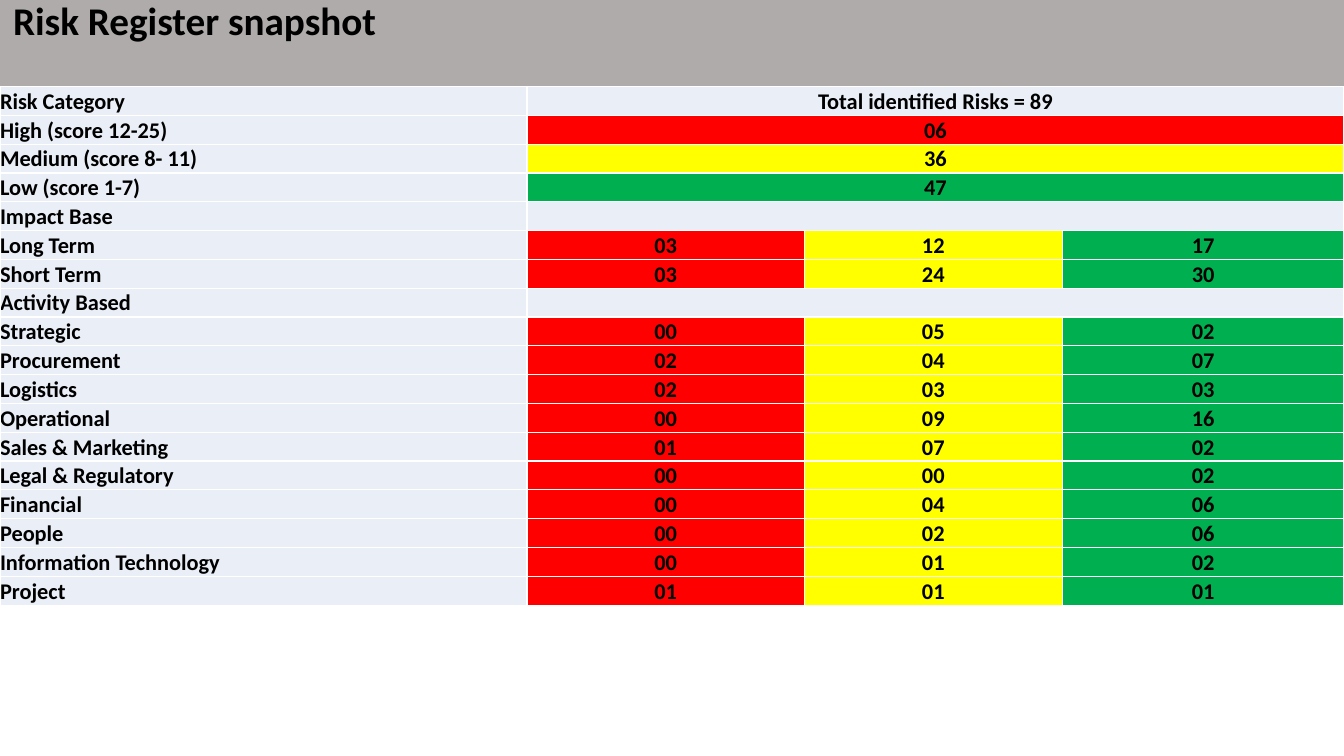
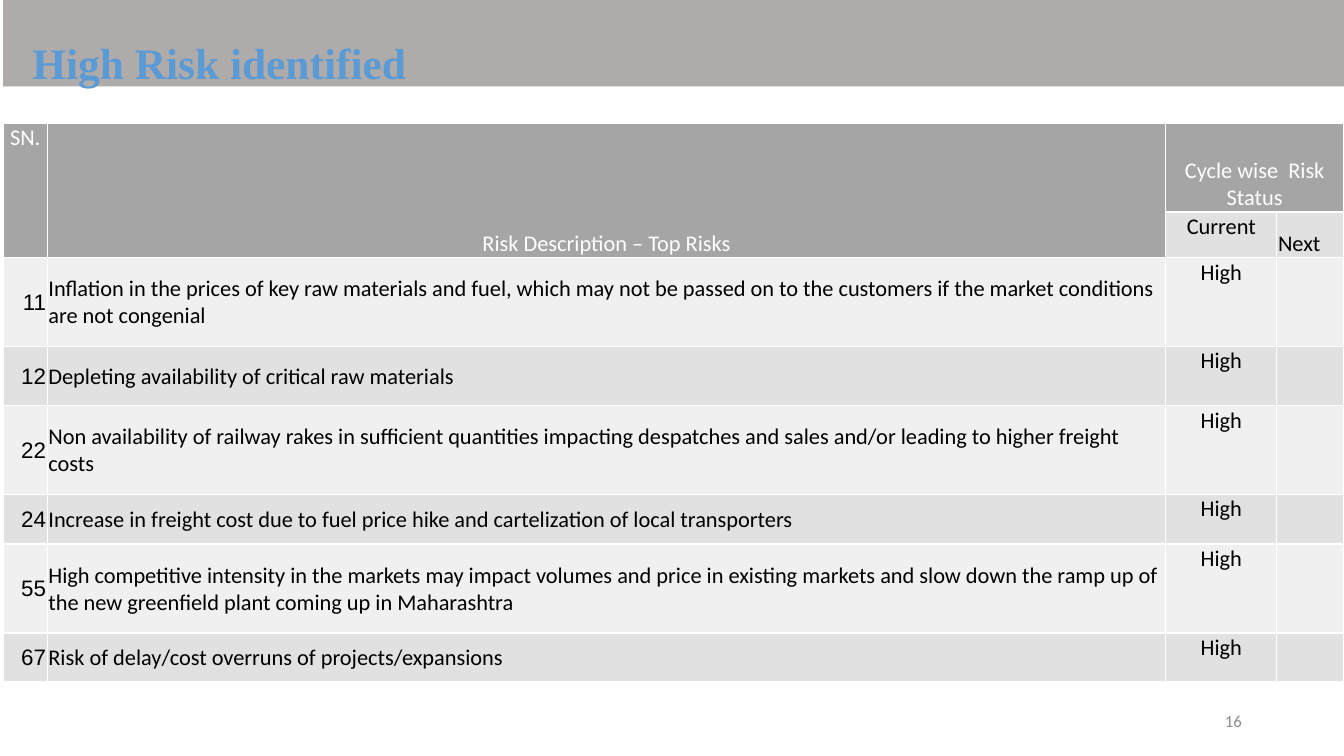
from pptx import Presentation
from pptx.dml.color import RGBColor
from pptx.enum.shapes import MSO_SHAPE as Shape
from pptx.enum.text import MSO_ANCHOR as Anchor, PP_ALIGN as Align
from pptx.util import Cm, Pt

BLACK = RGBColor(0x00, 0x00, 0x00)
WHITE = RGBColor(0xFF, 0xFF, 0xFF)
BAND_GREY = RGBColor(0xAF, 0xAB, 0xAB)
TITLE_BLUE = RGBColor(0x5B, 0x9B, 0xD5)
NUMBER_GREY = RGBColor(0x8C, 0x8C, 0x8C)
LABEL_BLUE = RGBColor(0xEA, 0xEF, 0xF7)
RED = RGBColor(0xFF, 0x00, 0x00)
YELLOW = RGBColor(0xFF, 0xFF, 0x00)
GREEN = RGBColor(0x00, 0xB0, 0x50)
HEADER_GREY = RGBColor(0xA5, 0xA5, 0xA5)
DARK_ROW = RGBColor(0xE1, 0xE1, 0xE1)
LIGHT_ROW = RGBColor(0xF0, 0xF0, 0xF0)

BODY_FONT = "Calibri"
NUMBER_FONT = "Arial"
SERIF_FONT = "Times New Roman"
PAGE_WIDTH, PAGE_HEIGHT = Cm(33.87), Cm(19.05)
BAND_HEIGHT = Cm(2.18)
EDGE = Cm(0.08)

SUMMARY_ROWS = [
    ("Risk Category", ["Total identified Risks = 89"], [LABEL_BLUE]),
    ("High (score 12-25)", ["06"], [RED]),
    ("Medium (score 8- 11)", ["36"], [YELLOW]),
    ("Low (score 1-7)", ["47"], [GREEN]),
]
IMPACT_COUNTS = [
    ("Long Term", ["03", "12", "17"]),
    ("Short Term", ["03", "24", "30"]),
]
ACTIVITY_COUNTS = [
    ("Strategic", ["00", "05", "02"]),
    ("Procurement", ["02", "04", "07"]),
    ("Logistics", ["02", "03", "03"]),
    ("Operational", ["00", "09", "16"]),
    ("Sales & Marketing", ["01", "07", "02"]),
    ("Legal & Regulatory", ["00", "00", "02"]),
    ("Financial", ["00", "04", "06"]),
    ("People", ["00", "02", "06"]),
    ("Information Technology", ["00", "01", "02"]),
    ("Project", ["01", "01", "01"]),
]
TOP_RISKS = [
    ("11", "Inflation in the prices of key raw materials and fuel, which may not be passed on "
           "to the customers if the market conditions are not congenial"),
    ("12", "Depleting availability of critical raw materials"),
    ("22", "Non availability of railway rakes in sufficient quantities impacting despatches "
           "and sales and/or leading to higher freight costs"),
    ("24", "Increase in freight cost due to fuel price hike and cartelization of local "
           "transporters"),
    ("55", "High competitive intensity in the markets may impact volumes and price in "
           "existing markets and slow down the ramp up of the new greenfield plant coming "
           "up in Maharashtra"),
    ("67", "Risk of delay/cost overruns of projects/expansions"),
]


def set_font(para, size, color=BLACK, name=BODY_FONT, bold=False):
    """Set the font of a whole paragraph."""
    font = para.font
    font.size, font.name, font.bold = Pt(size), name, bold
    font.color.rgb = color


def add_text(page, box, text, anchor=Anchor.TOP):
    """Add a wrapping text box and return it with its paragraph."""
    frame = page.shapes.add_textbox(*box).text_frame
    frame.word_wrap = True
    frame.vertical_anchor = anchor
    para = frame.paragraphs[0]
    para.text = text
    return frame, para


def add_band(page, left):
    """Draw the grey title band from left to the right page edge."""
    band = page.shapes.add_shape(Shape.RECTANGLE, left, 0, PAGE_WIDTH - left, BAND_HEIGHT)
    band.shadow.inherit = False
    band.fill.solid()
    band.fill.fore_color.rgb = BAND_GREY
    band.line.fill.background()


def add_grid(page, left, top, widths, heights, inset, bold=False):
    """Add a plain table whose cells share insets and a font."""
    table = page.shapes.add_table(len(heights), len(widths), left, top,
                                  sum(widths), sum(heights)).table
    table.first_row = table.horz_banding = False
    for column, width in zip(table.columns, widths):
        column.width = width
    for row, height in zip(table.rows, heights):
        row.height = height
    for cell in table.iter_cells():
        cell.margin_left = cell.margin_right = cell.margin_top = inset
        cell.margin_bottom = 0
        set_font(cell.text_frame.paragraphs[0], 16, bold=bold)
    return table


def fill_cell(cell, text, color, align=Align.LEFT, anchor=Anchor.BOTTOM):
    """Colour a cell, write its text and return the paragraph."""
    cell.fill.solid()
    cell.fill.fore_color.rgb = color
    cell.vertical_anchor = anchor
    para = cell.text_frame.paragraphs[0]
    para.alignment = align
    if text:
        para.text = text
    return para


def add_snapshot_table(page, left, top):
    """Place the risk counts by score, impact and activity."""
    levels = [RED, YELLOW, GREEN]
    rows = SUMMARY_ROWS + [("Impact Base", [""], [LABEL_BLUE])]
    rows += [(label, counts, levels) for label, counts in IMPACT_COUNTS]
    rows += [("Activity Based", [""], [LABEL_BLUE])]
    rows += [(label, counts, levels) for label, counts in ACTIVITY_COUNTS]
    widths = [Cm(13.28), Cm(6.99), Cm(6.5), Cm(7.1)]
    table = add_grid(page, left, top, widths, [Cm(13.07 / len(rows))] * len(rows), 0, True)
    for index, (label, counts, colors) in enumerate(rows):
        fill_cell(table.cell(index, 0), label, LABEL_BLUE)
        if len(counts) == 1:
            table.cell(index, 1).merge(table.cell(index, 3))
        for column, (count, color) in enumerate(zip(counts, colors), 1):
            fill_cell(table.cell(index, column), count, color, Align.CENTER)


def add_risk_table(page, left, top):
    """Place the top risks with their status in each cycle."""
    widths = [Cm(1.11), Cm(28.19), Cm(2.8), Cm(1.68)]
    heights = [Cm(h) for h in (2.24, 1.15, 2.24, 1.49, 2.24, 1.25, 2.24, 1.22)]
    table = add_grid(page, left, top, widths, heights, Cm(0.03))
    headers = [
        ("SN.", 0, (1, 0), Anchor.TOP),
        ("Risk Description – Top Risks", 1, (1, 1), Anchor.BOTTOM),
        ("Cycle wise  Risk Status", 2, (0, 3), Anchor.BOTTOM),
    ]
    for text, column, corner, anchor in headers:
        cell = table.cell(0, column)
        cell.merge(table.cell(*corner))
        para = fill_cell(cell, text, HEADER_GREY, Align.CENTER, anchor)
        para.font.color.rgb = WHITE
    fill_cell(table.cell(1, 2), "Current", DARK_ROW, Align.CENTER, Anchor.TOP)
    fill_cell(table.cell(1, 3), "Next", DARK_ROW)
    for index, (number, risk) in enumerate(TOP_RISKS, 2):
        color = DARK_ROW if index % 2 else LIGHT_ROW
        para = fill_cell(table.cell(index, 0), number, color, Align.RIGHT, Anchor.MIDDLE)
        para.font.name = NUMBER_FONT
        fill_cell(table.cell(index, 1), risk, color, anchor=Anchor.MIDDLE)
        fill_cell(table.cell(index, 2), "High", color, Align.CENTER, Anchor.TOP)
        fill_cell(table.cell(index, 3), "", color)


def build_snapshot(page):
    """Build the risk register overview."""
    add_band(page, 0)
    add_snapshot_table(page, 0, BAND_HEIGHT)
    box = (EDGE, 0, PAGE_WIDTH - EDGE, BAND_HEIGHT)
    para = add_text(page, box, "Risk Register snapshot")[1]
    para.line_spacing = 0.8
    set_font(para, 28, bold=True)


def build_high_risks(page):
    """Build the list of high risks."""
    add_band(page, EDGE)
    add_risk_table(page, EDGE, Cm(3.1))
    box = (Cm(0.82), Cm(0.91), Cm(30), Cm(1.25))
    frame, title = add_text(page, box, "High Risk identified")
    frame.margin_left = frame.margin_top = frame.margin_bottom = 0
    set_font(title, 31, TITLE_BLUE, SERIF_FONT, True)
    number_box = (Cm(23.93), Cm(17.65), Cm(7.62), Cm(1.02))
    number = add_text(page, number_box, "16", Anchor.MIDDLE)[1]
    number.alignment = Align.RIGHT
    set_font(number, 12, NUMBER_GREY)


def main():
    """Create and save the deck."""
    deck = Presentation()
    deck.slide_width, deck.slide_height = PAGE_WIDTH, PAGE_HEIGHT
    for build in (build_snapshot, build_high_risks):
        build(deck.slides.add_slide(deck.slide_layouts[6]))
    deck.save("out.pptx")


if __name__ == "__main__":
    main()
